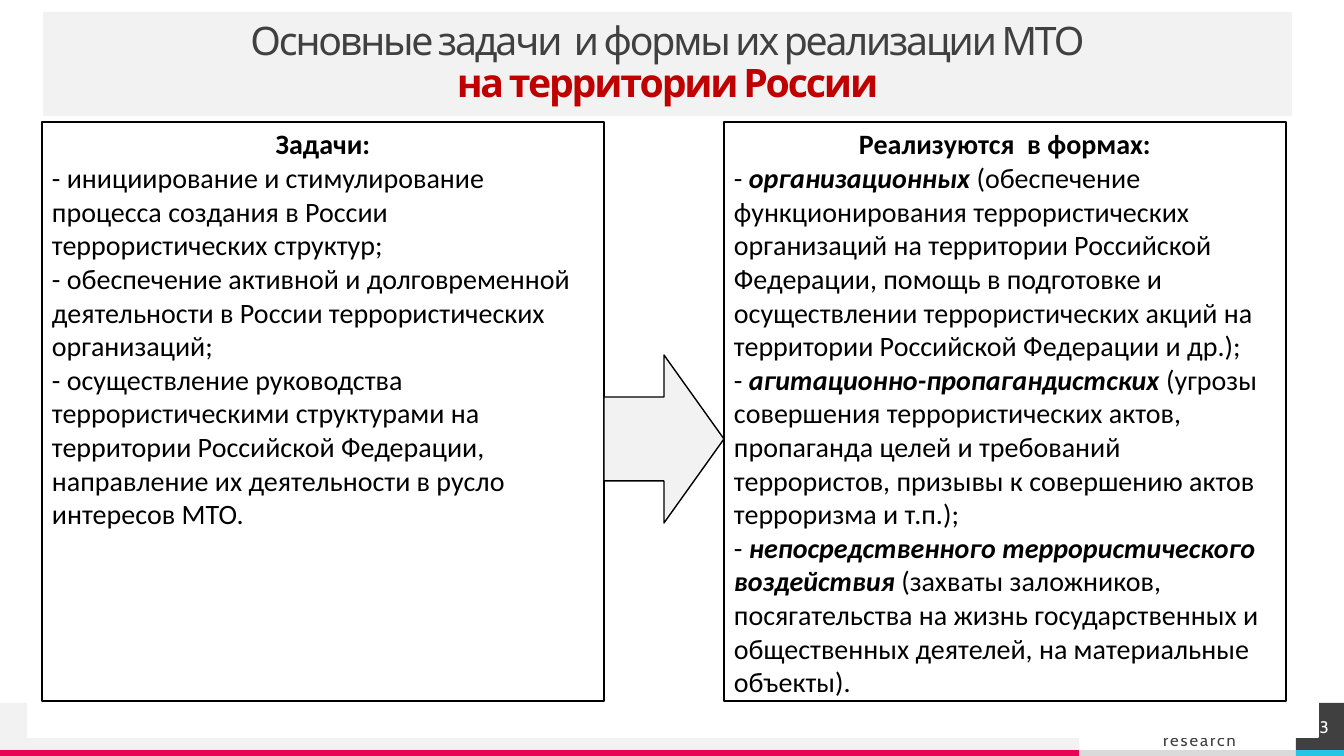
from pptx import Presentation
from pptx.dml.color import RGBColor
from pptx.enum.shapes import MSO_CONNECTOR, MSO_SHAPE
from pptx.enum.text import MSO_ANCHOR, PP_ALIGN
from pptx.oxml.ns import qn
from pptx.util import Emu, Pt
from lxml import etree

RECTANGLE, RIGHT_ARROW = MSO_SHAPE.RECTANGLE, MSO_SHAPE.RIGHT_ARROW
STRAIGHT = MSO_CONNECTOR.STRAIGHT
TOP, MIDDLE = MSO_ANCHOR.TOP, MSO_ANCHOR.MIDDLE
LEFT, CENTER, RIGHT = PP_ALIGN.LEFT, PP_ALIGN.CENTER, PP_ALIGN.RIGHT

WHITE = RGBColor(0xFF, 0xFF, 0xFF)
BLACK = RGBColor(0x00, 0x00, 0x00)
PALE = RGBColor(0xF2, 0xF2, 0xF2)
SILVER = RGBColor(0xDA, 0xDA, 0xDA)
DARK = RGBColor(0x40, 0x40, 0x40)
RED = RGBColor(0xC0, 0x00, 0x00)
PINK = RGBColor(0xE8, 0x05, 0x54)
CYAN = RGBColor(0x25, 0xC6, 0xE3)

PX = 12192000 / 1344
WIDTH, HEIGHT = 1344, 756
FOOTER_TOP, STRIPE_TOP = 703, 750
LOGO_LEFT, NUMBER_LEFT = 1079, 1296

TASKS = [
    "- инициирование и стимулирование процесса создания в России "
    "террористических структур;",
    "- обеспечение активной и долговременной деятельности в России "
    "террористических организаций;",
    "- осуществление руководства террористическими структурами на территории "
    "Российской Федерации, направление их деятельности в русло интересов МТО.",
]
# Each form: the emphasised name and its explanation
FORMS = [
    ("организационных ",
     "(обеспечение функционирования террористических организаций на территории "
     "Российской Федерации, помощь в подготовке и осуществлении террористических "
     "акций на территории Российской Федерации и др.);"),
    ("агитационно-пропагандистских",
     " (угрозы совершения террористических актов, пропаганда целей и требований "
     "террористов, призывы к совершению актов терроризма и т.п.);"),
    ("непосредственного террористического воздействия ",
     "(захваты заложников, посягательства на жизнь государственных и "
     "общественных деятелей, на материальные объекты)."),
]


def px(*lengths):
    return [Emu(round(length * PX)) for length in lengths]


def add_block(slide, box, fill, line=None, kind=RECTANGLE):
    block = slide.shapes.add_shape(kind, *px(*box))
    block.shadow.inherit = False
    block.fill.solid()
    block.fill.fore_color.rgb = fill
    if line is None:
        block.line.fill.background()
    else:
        block.line.color.rgb = line
        block.line.width = Pt(1)
    return block


def set_frame(frame, anchor, margins=(0, 0)):
    frame.word_wrap = True
    frame.vertical_anchor = anchor
    side, edge = px(*margins)
    frame.margin_left = frame.margin_right = side
    frame.margin_top = frame.margin_bottom = edge


def style_run(run, size, name, color, bold=False, italic=False, spacing=0):
    run.font.size = Pt(size)
    run.font.name = name
    run.font.color.rgb = color
    run.font.bold = bold
    run.font.italic = italic
    if spacing:
        run.font._element.set("spc", str(spacing))


def add_label(shape, text, align, color, spacing=0):
    set_frame(shape.text_frame, MIDDLE)
    shape.text_frame.text = text
    label = shape.text_frame.paragraphs[0]
    label.alignment = align
    style_run(label.runs[0], 12, "Cabin", color, spacing=spacing)


def add_footer(slide):
    stripe = HEIGHT - STRIPE_TOP
    band = STRIPE_TOP - FOOTER_TOP
    number_width = WIDTH - NUMBER_LEFT
    add_block(slide, (LOGO_LEFT, STRIPE_TOP, NUMBER_LEFT - LOGO_LEFT, stripe), SILVER)
    add_block(slide, (0, FOOTER_TOP, LOGO_LEFT, band), PALE)
    caption = slide.shapes.add_textbox(*px(1129, 730, 107, 20))
    add_label(caption, "research", RIGHT, DARK, 140)
    add_block(slide, (0, STRIPE_TOP, LOGO_LEFT, stripe), PINK)
    add_block(slide, (NUMBER_LEFT, STRIPE_TOP, number_width, stripe), CYAN)
    rule = slide.shapes.add_connector(
        STRAIGHT, *px(WIDTH, FOOTER_TOP, 0, FOOTER_TOP))
    rule.line.color.rgb = PALE
    rule.line.width = Pt(0.5)
    etree.SubElement(rule._element.spPr, qn("a:effectLst"))
    number = add_block(slide, (NUMBER_LEFT, FOOTER_TOP, number_width, band), DARK)
    add_label(number, "23", CENTER, WHITE)


def add_title(slide):
    banner = add_block(slide, (43, 12, 1249, 104), PALE)
    set_frame(banner.text_frame, MIDDLE)
    title = banner.text_frame.paragraphs[0]
    title.text = "Основные задачи  и формы их реализации МТО\vна территории России"
    title.alignment = CENTER
    title.line_spacing = 0.9
    subject, place = title.runs
    style_run(subject, 28, "Cabin", DARK, spacing=-150)
    style_run(place, 28, "Cabin", RED, bold=True, spacing=-150)


def add_column(slide, left, heading, items):
    """Each item is a list of (text, emphasised) pieces."""
    column = add_block(slide, (left, 122, 562, 579), WHITE, BLACK)
    frame = column.text_frame
    set_frame(frame, TOP, (10, 5))
    frame.text = heading
    header = frame.paragraphs[0]
    header.alignment = CENTER
    style_run(header.runs[0], 20, "Calibri", BLACK, bold=True)
    for pieces in items:
        item = frame.add_paragraph()
        item.alignment = LEFT
        for text, emphasised in pieces:
            run = item.add_run()
            run.text = text
            style_run(run, 20, "Calibri", BLACK, emphasised, emphasised)


def main():
    deck = Presentation()
    deck.slide_width, deck.slide_height = px(WIDTH, HEIGHT)
    slide = deck.slides.add_slide(deck.slide_layouts[6])

    # Footer and title banner
    add_footer(slide)
    add_title(slide)

    # White panel behind the columns
    add_block(slide, (28, 159, 1290, 578), WHITE, WHITE)

    # Tasks lead to forms
    add_column(slide, 42, "Задачи:", [[(task, False)] for task in TASKS])
    add_column(slide, 724, "Реализуются  в формах:",
               [[("- ", False), (name, True), (details, False)]
                for name, details in FORMS])
    add_block(slide, (604, 355, 120, 168), PALE, BLACK, RIGHT_ARROW)

    deck.save("out.pptx")


if __name__ == "__main__":
    main()
